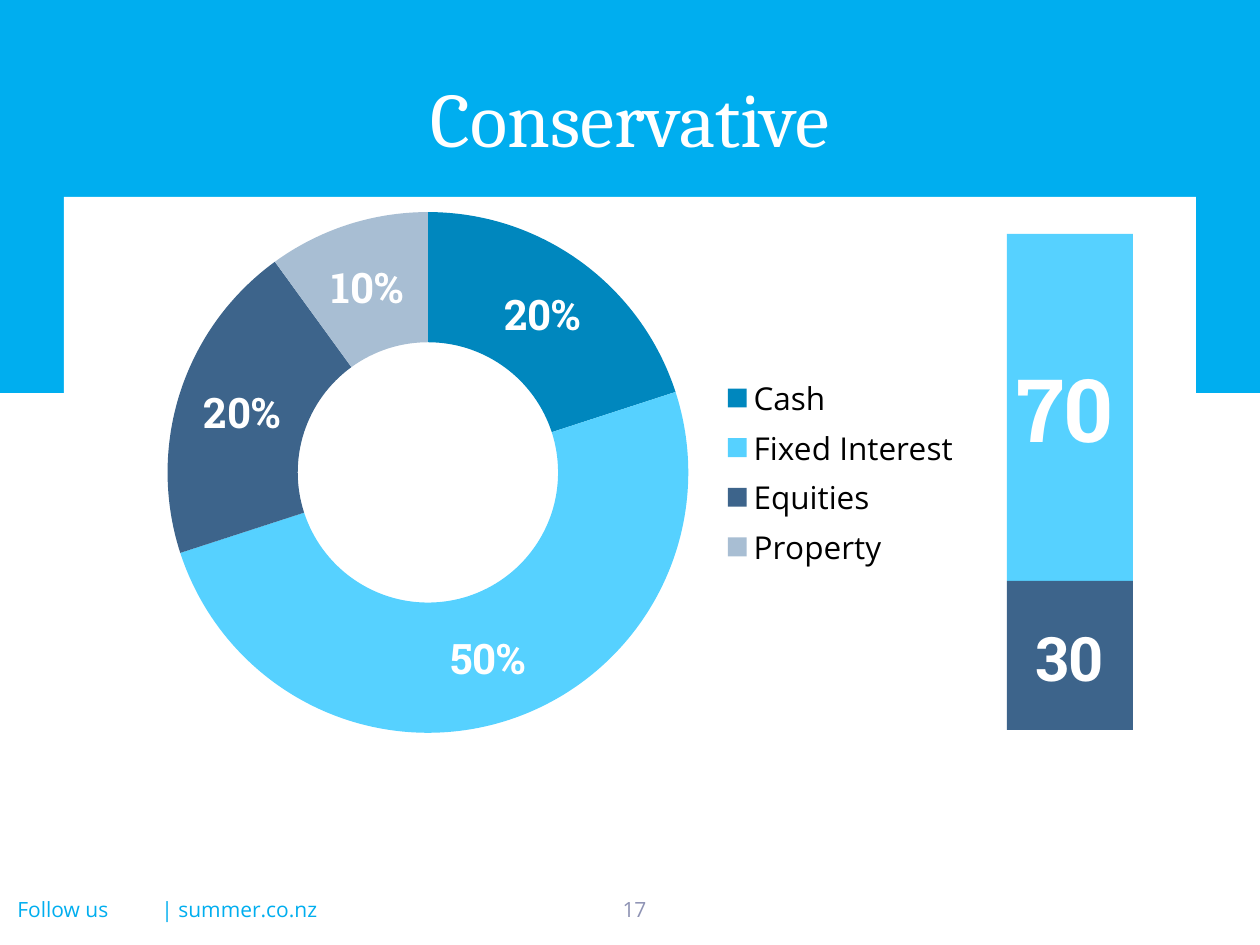
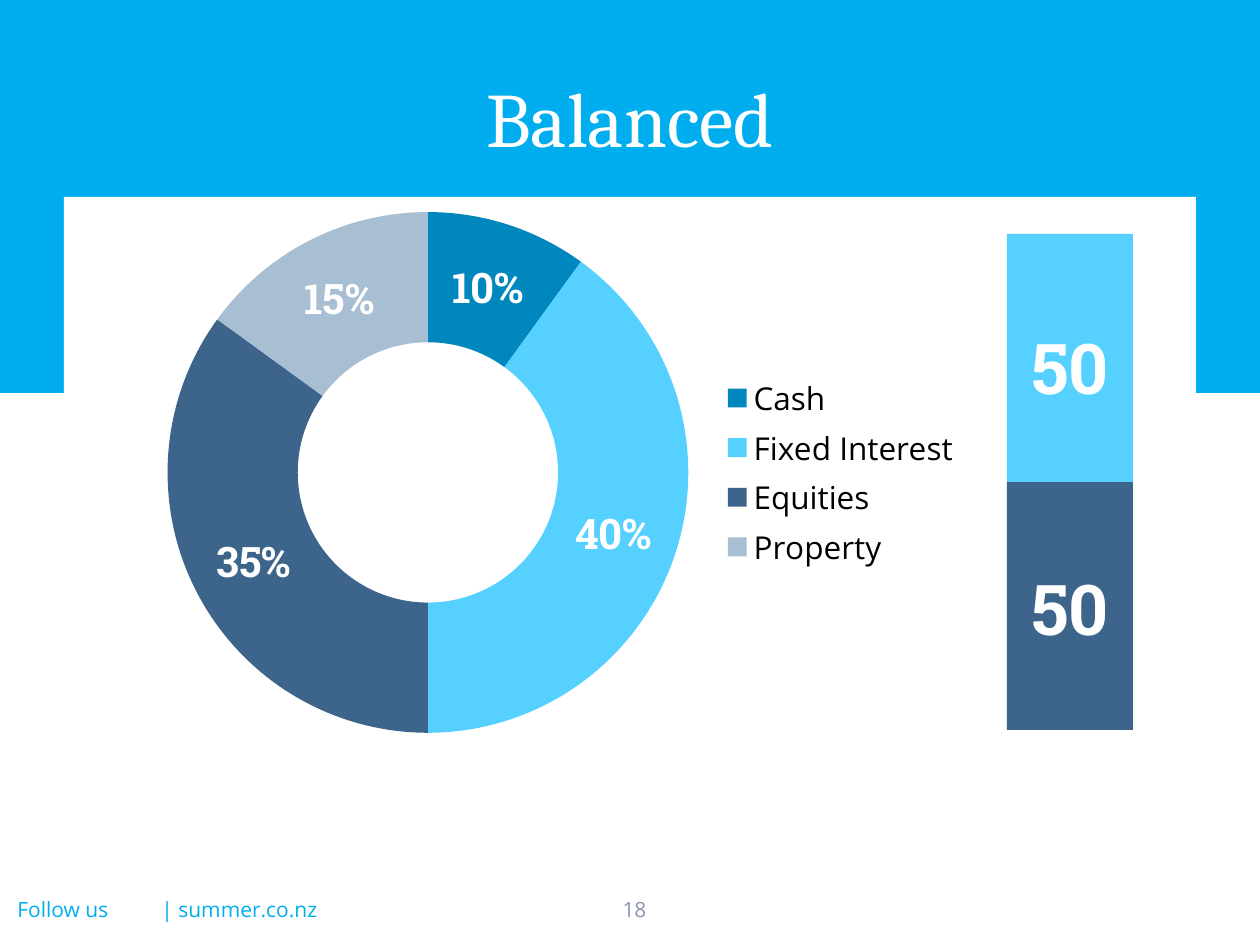
from dataclasses import dataclass

from pptx import Presentation
from pptx.chart.data import CategoryChartData as ChartData
from pptx.dml.color import RGBColor as Color
from pptx.enum.chart import XL_CHART_TYPE as Kind, XL_LEGEND_POSITION as Side
from pptx.enum.shapes import MSO_SHAPE as Shape
from pptx.enum.text import MSO_ANCHOR as Anchor, PP_ALIGN as Align
from pptx.oxml import parse_xml
from pptx.oxml.ns import nsdecls
from pptx.util import Emu, Pt

SCALE = 914400 / 126


@dataclass(frozen=True)
class Theme:
    band: str = "00AEEF"
    paper: str = "FFFFFF"
    ink: str = "000000"
    navy: str = "25408F"
    muted: str = "8E93B4"
    cash: str = "0087BE"
    fixed: str = "56D1FF"
    equity: str = "3D648B"
    estate: str = "A8BED3"
    serif: str = "Cambria"
    sans: str = "Open Sans"
    slab: str = "Roboto Slab"
    title: int = 44
    share: int = 24
    legend: int = 18
    small: int = 12


THEME = Theme()
ASSETS = ("Cash", "Fixed Interest", "Equities", "Property")
TINTS = (THEME.cash, THEME.fixed, THEME.equity, THEME.estate)

# Each fund's bar: value and label (box within the bar, type size, anchor).
FUNDS = (
    ("Conservative", 17, (20, 50, 20, 10), (
        (70, (-12, 0, 140, 348), 50, Anchor.MIDDLE),
        (30, (-12, 359, 149, 129), 35, Anchor.MIDDLE))),
    ("Balanced", 18, (10, 40, 35, 15), (
        (50, (-61, 71, 248, 110), 40, Anchor.BOTTOM),
        (50, (-61, 309, 248, 129), 40, Anchor.MIDDLE))),
)


def px(*lengths):
    """Turn px lengths into EMU."""
    return [Emu(round(n * SCALE)) for n in lengths]


def style(font, face, size, tint, bold=False):
    font.name, font.size, font.bold = face, Pt(size), bold
    font.color.rgb = Color.from_string(tint)


def text(slide, words, box, face=THEME.sans, size=THEME.small,
         tint=THEME.paper, bold=False, align=Align.CENTER, anchor=Anchor.TOP):
    frame = slide.shapes.add_textbox(*px(*box)).text_frame
    frame.word_wrap = True
    frame.vertical_anchor = anchor
    para = frame.paragraphs[0]
    para.alignment = align
    run = para.add_run()
    run.text = words
    style(run.font, face, size, tint, bold)


def rect(slide, box, tint):
    shape = slide.shapes.add_shape(Shape.RECTANGLE, *px(*box))
    shape.shadow.inherit = False
    shape.fill.solid()
    shape.fill.fore_color.rgb = Color.from_string(tint)
    shape.line.fill.background()


def frame(slide, title, box):
    """Draw the band, the white panel set into it, and the title."""
    left, top, width, height = box
    rect(slide, box, THEME.band)
    rect(slide, (left + 64, top + 197, width - 130, height + 121), THEME.paper)
    text(slide, title, (left + 63, top + 38, width - 128, 158),
         face=THEME.serif, size=THEME.title, anchor=Anchor.MIDDLE)


def footer(slide, number, box):
    left, top, width, height = box
    for words, start, span in (("Follow us", 5, 121),
                               ("| summer.co.nz", 149, 185)):
        text(slide, words, (left + start, top, span, height),
             tint=THEME.band, align=Align.LEFT)
    text(slide, str(number), (left + 600, top, 69, height), tint=THEME.muted)


def fix_plot(chart, **parts):
    """Place the plot area by fractions of the chart box."""
    area = chart.plots[0]._element.getparent()
    for old in area.findall("{*}layout"):
        area.remove(old)
    marks = "".join(f'<c:{key} val="{val}"/>' for key, val in parts.items())
    area.insert(0, parse_xml(
        f'<c:layout {nsdecls("c")}><c:manualLayout>'
        '<c:layoutTarget val="inner"/><c:xMode val="edge"/>'
        f'<c:yMode val="edge"/>{marks}</c:manualLayout></c:layout>'))


def ring(slide, shares, box):
    """Draw the doughnut of asset shares with its legend."""
    data = ChartData()
    data.categories = ASSETS
    data.add_series("Series 1", shares)
    chart = slide.shapes.add_chart(Kind.DOUGHNUT, *px(*box), data).chart
    chart.has_title = False
    style(chart.font, THEME.sans, THEME.legend, THEME.navy)
    chart.has_legend = True
    chart.legend.position = Side.RIGHT
    chart.legend.include_in_layout = False
    style(chart.legend.font, THEME.sans, THEME.legend, THEME.ink)

    plot = chart.plots[0]
    plot.vary_by_categories = True
    for index, tint in enumerate(TINTS):
        point = plot.series[0].points[index].format
        point.fill.solid()
        point.fill.fore_color.rgb = Color.from_string(tint)
        point.line.fill.background()
    plot.has_data_labels = True
    labels = plot.data_labels
    labels.show_percentage, labels.show_value = True, False
    labels.number_format, labels.number_format_is_linked = "0%", False
    style(labels.font, THEME.slab, THEME.share, THEME.paper, bold=True)
    fix_plot(chart, x=0.04, y=0.03, w=0.62, h=0.94)


def stack(slide, parts, box):
    """Split a bar by value and label each part."""
    left, top, width, height = box
    total = sum(part[0] for part in parts)
    start = top
    for (value, spot, size, anchor), tint in zip(
            parts, (THEME.fixed, THEME.equity)):
        tall = round(height * value / total)
        rect(slide, (left, start, width, tall), tint)
        start += tall
        dx, dy, wide, high = spot
        text(slide, str(value), (left + dx, top + dy, wide, high),
             face=THEME.slab, size=size, bold=True, anchor=anchor)


def fund(deck, title, number, shares, parts):
    slide = deck.slides.add_slide(deck.slide_layouts[6])
    frame(slide, title, (0, 0, 1262, 393))
    footer(slide, number, (0, 890, 1260, 39))
    ring(slide, shares, (134, 193, 840, 559))
    stack(slide, parts, (1007, 234, 126, 496))


def main():
    deck = Presentation()
    deck.slide_width, deck.slide_height = px(1260, 945)
    for item in FUNDS:
        fund(deck, *item)
    deck.save("out.pptx")


if __name__ == "__main__":
    main()
